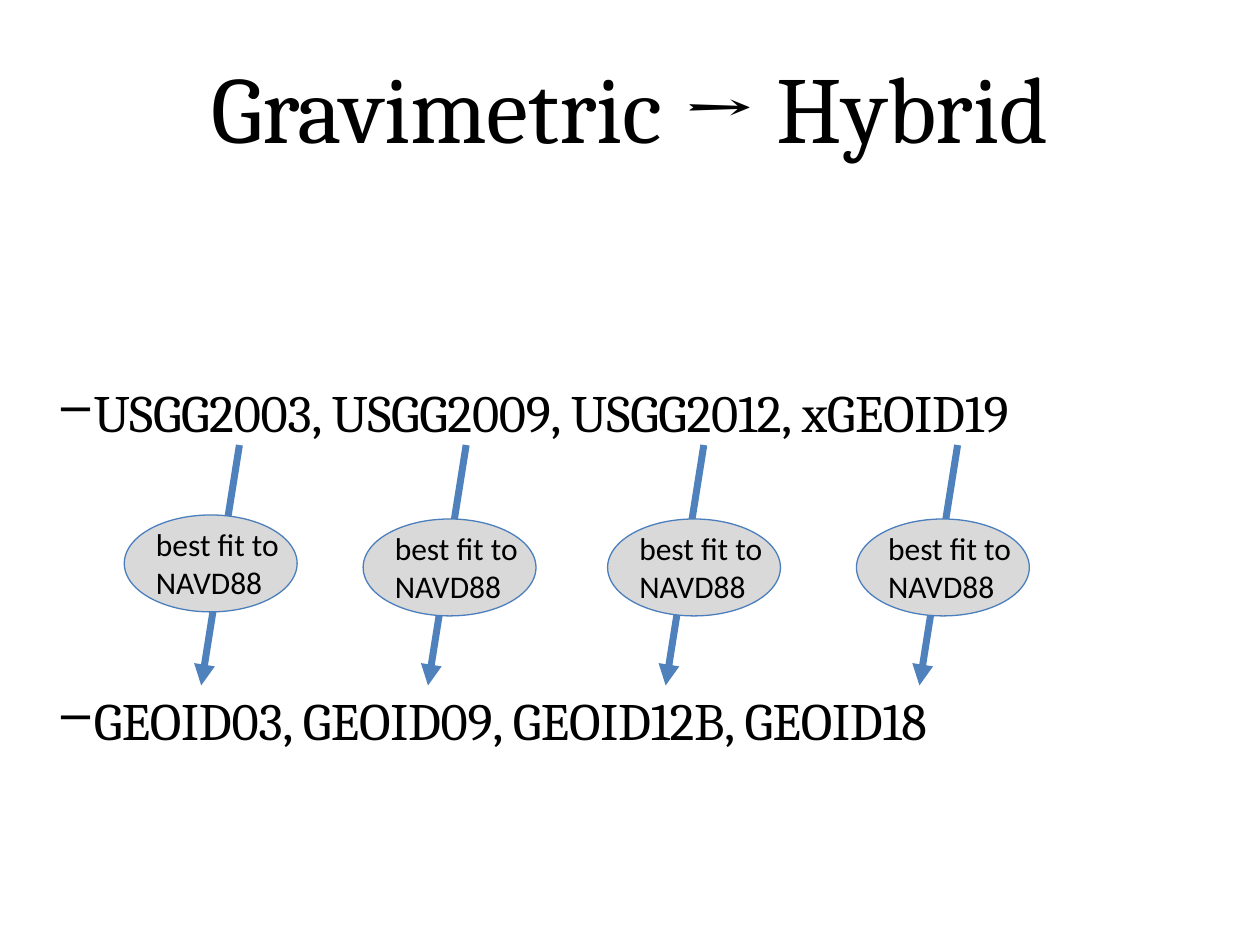
"""Build the slide on gravimetric and hybrid geoid models."""
from lxml import etree
from pptx import Presentation
from pptx.dml.color import RGBColor
from pptx.enum.shapes import MSO_CONNECTOR, MSO_SHAPE
from pptx.enum.text import MSO_ANCHOR, PP_ALIGN
from pptx.oxml.ns import qn
from pptx.util import Pt

STRAIGHT = MSO_CONNECTOR.STRAIGHT
OVAL = MSO_SHAPE.OVAL
MIDDLE = MSO_ANCHOR.MIDDLE
CENTER = PP_ALIGN.CENTER
BLACK = RGBColor(0x00, 0x00, 0x00)
ARROW_BLUE = RGBColor(0x4F, 0x81, 0xBD)
EDGE_BLUE = RGBColor(0x4B, 0x7E, 0xBC)
GREY = RGBColor(0xD9, 0xD9, 0xD9)

TITLE = "Gravimetric → Hybrid"
MODEL_LINES = [
    "USGG2003, USGG2009, USGG2012, xGEOID19",
    "GEOID03, GEOID09, GEOID12B, GEOID18",
]
FIT_LABEL = "best fit to NAVD88"
LINE_GAP = 140
FITS = [
    {"arrow_x": 136.8, "oval": (71, 294.3)},
    {"arrow_x": 266.4, "oval": (207.5, 296.6)},
    {"arrow_x": 402.2, "oval": (347.2, 296.6)},
    {"arrow_x": 547.2, "oval": (489.4, 296.6)},
]
ARROW_TOP, ARROW_BOTTOM, ARROW_SHIFT = 254.3, 391.7, -21.8
OVAL_SIZE = (98.8, 55.4)
LABEL_OFFSET = (11, 2.2)
LABEL_SIZE = (87.8, 50.9)


def set_font(para, name, size):
    para.font.name = name
    para.font.size = Pt(size)
    para.font.color.rgb = BLACK


def add_tight_text(para, text, size):
    span = para.add_run()
    span.text = text
    span.font._element.set("spc", "-10")
    set_font(para, "Cambria", size)


def add_box(page, left, top, width, height, margins=None):
    box = page.shapes.add_textbox(Pt(left), Pt(top), Pt(width), Pt(height))
    frame = box.text_frame
    frame.word_wrap = True
    if margins:
        (frame.margin_left, frame.margin_top,
         frame.margin_right, frame.margin_bottom) = map(Pt, margins)
    return frame


def add_dash(para):
    properties = para._p.get_or_add_pPr()
    properties.set("marL", str(Pt(37)))
    properties.set("indent", str(Pt(-18.7)))
    etree.SubElement(properties, qn("a:buChar"), char="–")


def add_arrow(page, x):
    arrow = page.shapes.add_connector(
        STRAIGHT, Pt(x), Pt(ARROW_TOP), Pt(x + ARROW_SHIFT), Pt(ARROW_BOTTOM))
    arrow.line.color.rgb = ARROW_BLUE
    arrow.line.width = Pt(4)
    etree.SubElement(arrow.line._get_or_add_ln(), qn("a:tailEnd"), type="triangle")
    etree.SubElement(arrow._element.spPr, qn("a:effectLst"))


def add_fit(page, left, top):
    oval = page.shapes.add_shape(OVAL, Pt(left), Pt(top), *map(Pt, OVAL_SIZE))
    oval.shadow.inherit = False
    oval.fill.solid()
    oval.fill.fore_color.rgb = GREY
    oval.line.color.rgb = EDGE_BLUE
    oval.line.width = Pt(0.75)
    frame = add_box(page, left + LABEL_OFFSET[0], top + LABEL_OFFSET[1], *LABEL_SIZE)
    frame.text = FIT_LABEL
    set_font(frame.paragraphs[0], "Calibri", 18)


def main():
    deck = Presentation()
    deck.slide_width, deck.slide_height = Pt(720), Pt(540)
    page = deck.slides.add_slide(deck.slide_layouts[6])

    models = add_box(page, 16.6, 117.4, 688.3, 321, (0, 99.5, 0, 0))
    for index, text in enumerate(MODEL_LINES):
        para = models.add_paragraph() if index else models.paragraphs[0]
        add_dash(para)
        add_tight_text(para, text, 30)
        if index:
            para.space_before = Pt(LINE_GAP)

    title = add_box(page, 0, 26, 720, 67, (0, 1.4, 0, 0))
    title.vertical_anchor = MIDDLE
    title.paragraphs[0].alignment = CENTER
    add_tight_text(title.paragraphs[0], TITLE, 54)

    for fit in FITS:
        add_arrow(page, fit["arrow_x"])
    for fit in FITS:
        add_fit(page, *fit["oval"])
    deck.save("out.pptx")


if __name__ == "__main__":
    main()
